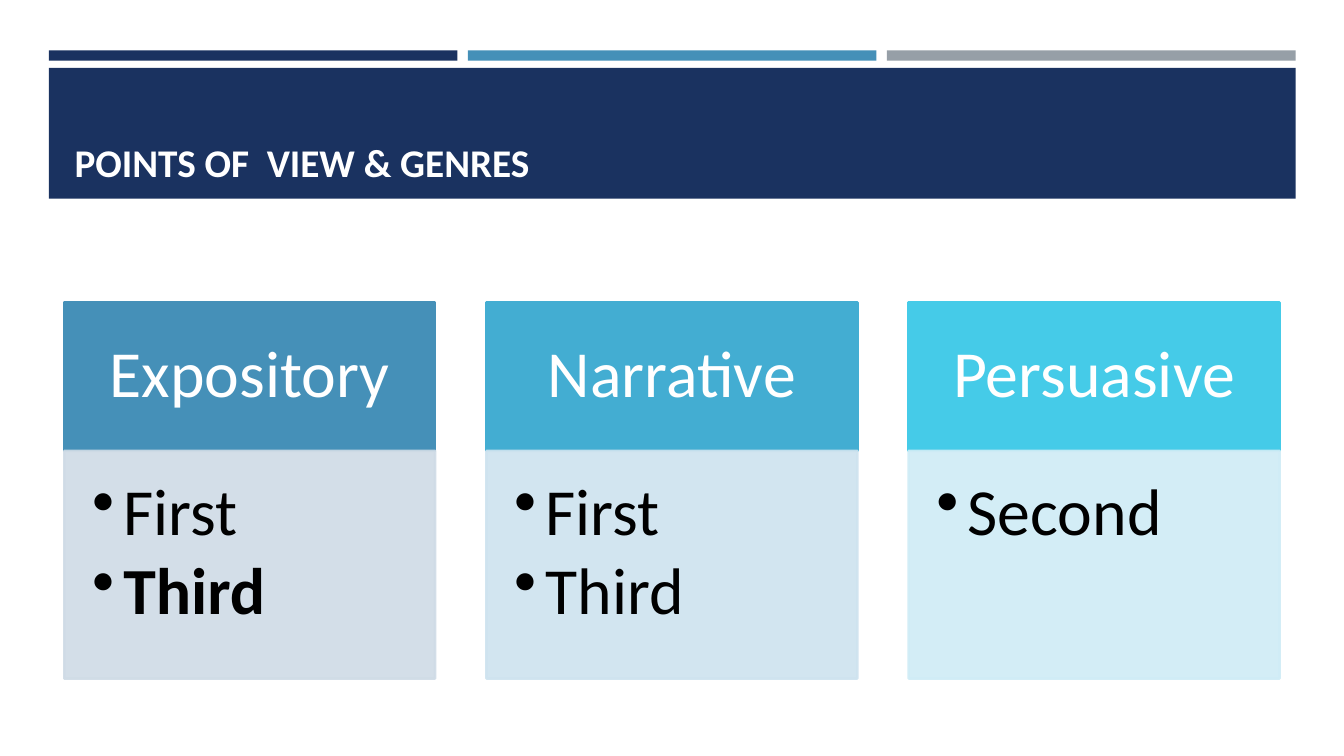
"""Builds the slide on points of view and genres."""
import pptx
import pptx.dml.color
import pptx.enum.shapes
import pptx.enum.text
import pptx.oxml
import pptx.oxml.ns
import pptx.util

Cm = pptx.util.Cm
Pt = pptx.util.Pt
Anchor = pptx.enum.text.MSO_ANCHOR
Align = pptx.enum.text.PP_ALIGN
NAVY, BLUE, GREY = "1A3260", "4590B8", "969FA7"
GENRES = [
    ("Expository", BLUE, "CFDBE6", [("First", False), ("Third", True)]),
    ("Narrative", "43ADD2", "CEE3EF", [("First", False), ("Third", False)]),
    ("Persuasive", "45CBE8", "CFECF6", [("Second", False)]),
]


def color(text):
    """Turn a hex string into a colour."""
    return pptx.dml.color.RGBColor.from_string(text)


def add_box(slide, left, top, width, height, fill, line=False):
    """Add a filled rectangle, outlined in its own colour on request."""
    box = slide.shapes.add_shape(
        pptx.enum.shapes.MSO_SHAPE.RECTANGLE, left, top, width, height)
    box.shadow.inherit = False
    box.fill.solid()
    box.fill.fore_color.rgb = color(fill)
    if line:
        box.line.color.rgb = color(fill)
        box.line.width = Pt(1.75)
    else:
        box.line.fill.background()
    return box


def set_frame(shape, anchor, left, top, right, bottom):
    """Set the anchor and insets of a shape's text."""
    frame = shape.text_frame
    frame.word_wrap = True
    frame.auto_size = pptx.enum.text.MSO_AUTO_SIZE.NONE
    frame.vertical_anchor = anchor
    frame.margin_left, frame.margin_top = left, top
    frame.margin_right, frame.margin_bottom = right, bottom
    return frame


def set_para(para, text, size, ink, align, bold=False, after=0):
    """Fill and format one paragraph."""
    para.text = text
    para.alignment = align
    para.line_spacing = 0.9
    para.space_before = Pt(0)
    para.space_after = Pt(after)
    para.font.name = "Calibri"
    para.font.size = Pt(size)
    para.font.bold = bold
    para.font.color.rgb = color(ink)


def add_bullet(para):
    """Give a paragraph a hanging bullet."""
    props = para._p.get_or_add_pPr()
    props.set("marL", str(Cm(0.79)))
    props.set("indent", str(-Cm(0.79)))
    mark = pptx.oxml.parse_xml(
        f'<a:buChar {pptx.oxml.ns.nsdecls("a")} char="•"/>')
    props.insert_element_before(mark, "a:tabLst", "a:defRPr", "a:extLst")


def fade(shape, percent):
    """Make the fill and line of a shape partly transparent."""
    for tone in shape.element.spPr.iter(pptx.oxml.ns.qn("a:srgbClr")):
        tone.append(pptx.oxml.parse_xml(
            f'<a:alpha {pptx.oxml.ns.nsdecls("a")} val="{percent * 1000}"/>'))


def add_header(slide, left, top, width, height):
    """Draw the three stripes and the banner with the title."""
    gap = Cm(0.26)
    part = (width - 2 * gap) // 3
    for i, fill in enumerate((NAVY, BLUE, GREY)):
        add_box(slide, left + i * (part + gap), top, part, Cm(0.26), fill)
    drop = Cm(0.44)
    add_box(slide, left, top + drop, width, height - drop, NAVY)
    title = slide.shapes.title
    slide.shapes.element.append(title.element)
    title.left, title.top = left + Cm(0.4), top + Cm(0.69)
    title.width, title.height = width - Cm(0.8), height - Cm(0.92)
    frame = set_frame(title, Anchor.BOTTOM, Cm(0.25), Cm(0.13), Cm(0.25), Cm(0.1))
    set_para(frame.paragraphs[0], "POINTS OF  VIEW & GENRES", 28, "FFFFFF",
             Align.LEFT, True)


def add_genre(slide, left, top, width, height, genre):
    """Draw one genre: its heading above its points of view."""
    name, dark, light, views = genre
    split = Cm(3.74)
    head = add_box(slide, left, top, width, split, dark, True)
    frame = set_frame(head, Anchor.MIDDLE, Cm(0.93), Cm(0.53), Cm(0.93), Cm(0.53))
    set_para(frame.paragraphs[0], name, 47, "FFFFFF", Align.CENTER)
    body = add_box(slide, left, top + split, width, height - split, light, True)
    fade(body, 90)
    frame = set_frame(body, Anchor.TOP, Cm(0.7), Cm(0.7), Cm(0.93), Cm(1.04))
    for i, (view, bold) in enumerate(views):
        para = frame.add_paragraph() if i else frame.paragraphs[0]
        set_para(para, view, 47, "000000", Align.LEFT, bold, 6)
        add_bullet(para)


def main():
    """Build and save the slide."""
    deck = pptx.Presentation()
    deck.slide_width, deck.slide_height = Cm(33.87), Cm(19.05)
    slide = deck.slides.add_slide(deck.slide_layouts[5])
    add_header(slide, Cm(1.23), Cm(1.27), Cm(31.42), Cm(3.74))
    for i, genre in enumerate(GENRES):
        add_genre(slide, Cm(1.62 + i * 10.64), Cm(7.62), Cm(9.35), Cm(9.48), genre)
    deck.save("out.pptx")


if __name__ == "__main__":
    main()
